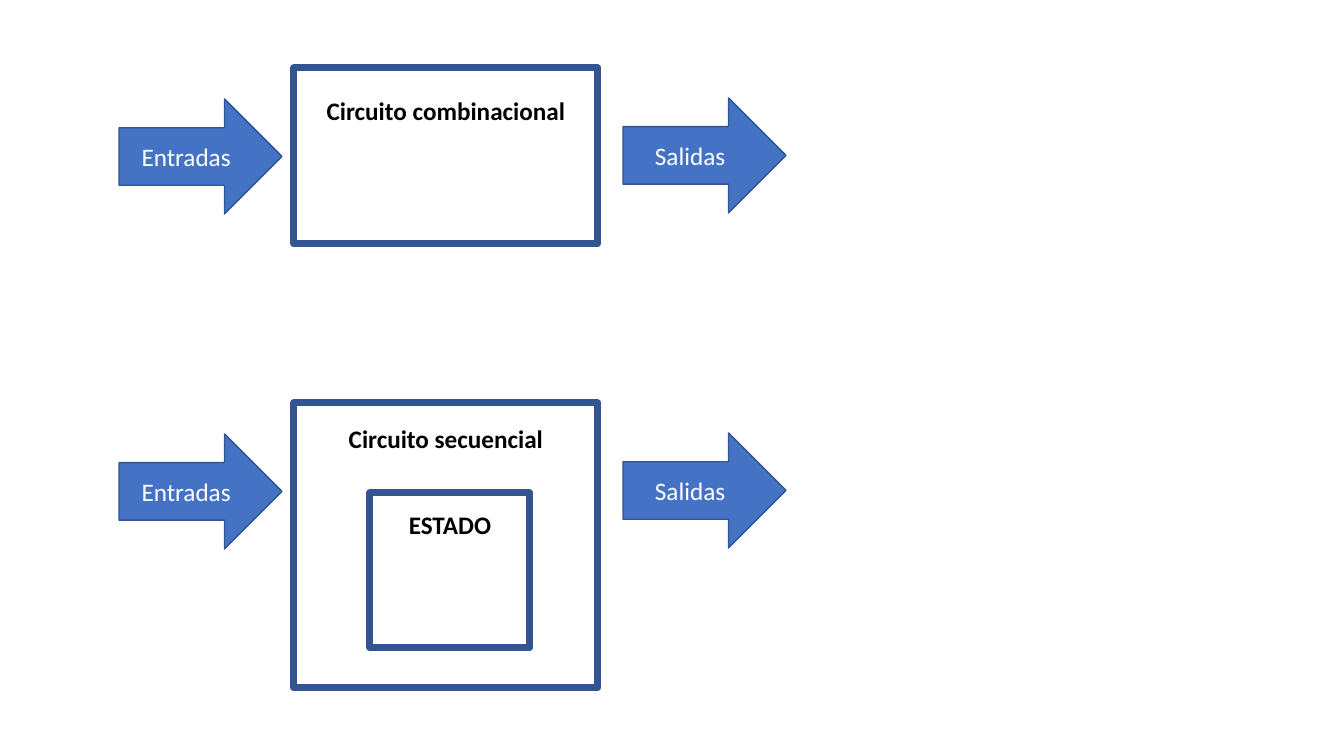
from pptx import Presentation
from pptx.dml.color import RGBColor
from pptx.enum.shapes import MSO_SHAPE
from pptx.enum.text import MSO_ANCHOR, PP_ALIGN
from pptx.util import Emu, Pt

RECTANGLE = MSO_SHAPE.RECTANGLE
RIGHT_ARROW = MSO_SHAPE.RIGHT_ARROW
TOP = MSO_ANCHOR.TOP
MIDDLE = MSO_ANCHOR.MIDDLE
CENTER = PP_ALIGN.CENTER

BLUE = RGBColor(0x44, 0x72, 0xC4)
DARK_BLUE = RGBColor(0x32, 0x54, 0x91)
BLACK = RGBColor(0, 0, 0)
WHITE = RGBColor(255, 255, 255)


def px(length):
    return Emu(round(length * 914400 / 100.8))


class Diagram:
    font_name = "Calibri"
    font_size = Pt(18)

    def __init__(self, slide):
        self.slide = slide

    def block(self, preset, bounds, line_width):
        block = self.slide.shapes.add_shape(preset, *map(px, bounds))
        block.shadow.inherit = False
        block.line.color.rgb = DARK_BLUE
        block.line.width = Pt(line_width)
        return block

    def label(self, block, text, color, bold, anchor):
        frame = block.text_frame
        frame.word_wrap = True
        frame.vertical_anchor = anchor
        paragraph = frame.paragraphs[0]
        paragraph.alignment = CENTER
        run = paragraph.add_run()
        run.text = text
        run.font.name = self.font_name
        run.font.size = self.font_size
        run.font.bold = bold
        run.font.color.rgb = color

    def box(self, title, bounds, title_gap):
        box = self.block(RECTANGLE, bounds, 5)
        box.fill.background()
        box.text_frame.margin_top = px(title_gap)
        self.label(box, title, BLACK, True, TOP)

    def arrow(self, text, left, top):
        arrow = self.block(RIGHT_ARROW, (left, top, 163, 115), 1)
        arrow.fill.solid()
        arrow.fill.fore_color.rgb = BLUE
        self.label(arrow, text, WHITE, False, MIDDLE)

    def circuit(self, title, top, height, title_gap):
        self.box(title, (294, top, 304, height), title_gap)
        self.arrow("Entradas", 119, top + 31)
        self.arrow("Salidas", 623, top + 30)


def main():
    presentation = Presentation()
    presentation.slide_width = px(1344)
    presentation.slide_height = px(756)
    slide = presentation.slides.add_slide(presentation.slide_layouts[6])
    diagram = Diagram(slide)
    diagram.circuit("Circuito combinacional", 68, 176, 27)
    diagram.circuit("Circuito secuencial", 403, 285, 20)
    diagram.box("ESTADO", (370, 493, 160, 155), 16)
    presentation.save("out.pptx")


if __name__ == "__main__":
    main()
